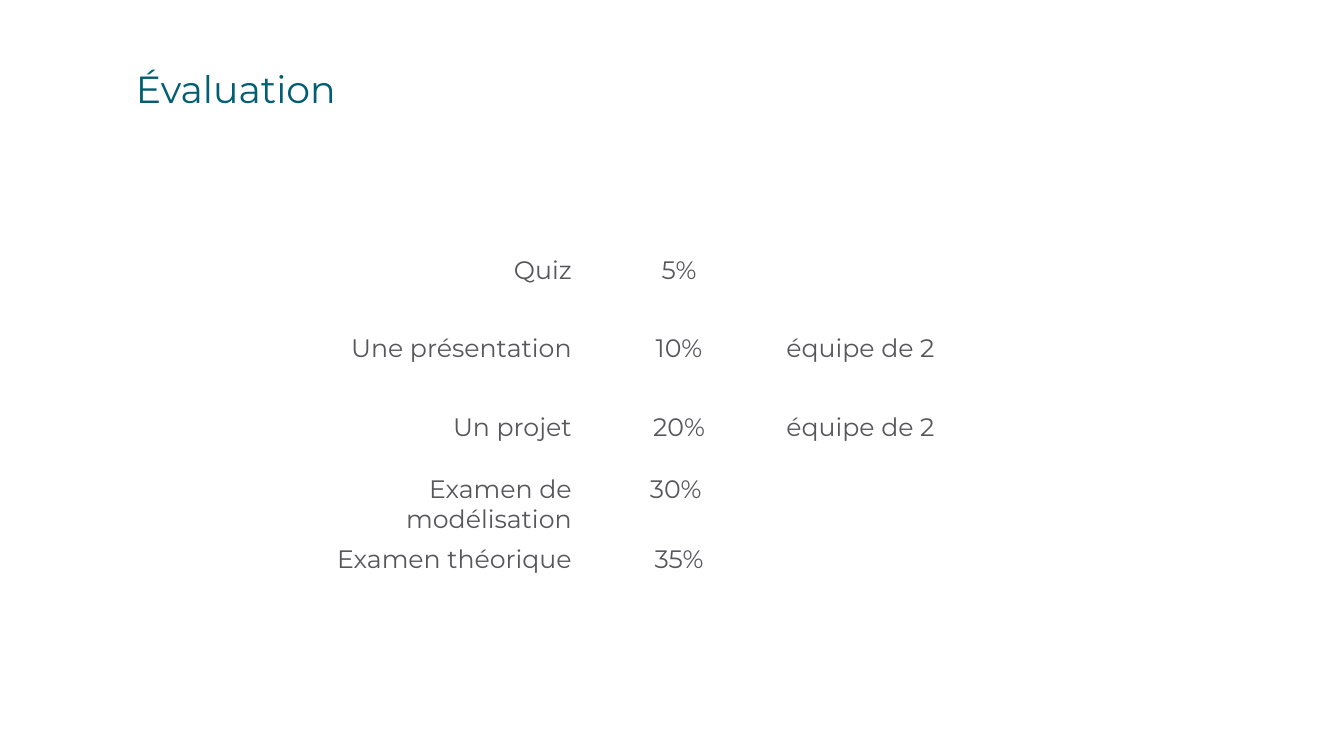
import dataclasses

import pptx
import pptx.dml.color
import pptx.enum.text
import pptx.util

Inches = pptx.util.Inches
Pt = pptx.util.Pt
Align = pptx.enum.text.PP_ALIGN
Anchor = pptx.enum.text.MSO_ANCHOR


@dataclasses.dataclass(frozen=True)
class Theme:
    """Typeface, type sizes and colours of the slide."""
    typeface: str = "Montserrat"
    title_size: float = 27
    body_size: float = 18
    skipped_line: float = 22
    title_color: str = "025E73"
    body_color: str = "57565B"
    background: str = "FFFFFF"


class SlideBuilder:
    """Draws styled elements on the current slide."""

    def __init__(self, slide, theme):
        self.slide = slide
        self.theme = theme
        fill = slide.background.fill
        fill.solid()
        fill.fore_color.rgb = pptx.dml.color.RGBColor.from_string(theme.background)

    def style_text(self, paragraph, text, size, color, **layout):
        """Fill a paragraph with styled text."""
        paragraph.text = text
        for name, value in layout.items():
            setattr(paragraph, name, value)
        font = paragraph.runs[0].font
        formats = {"name": self.theme.typeface, "size": Pt(size), "bold": False}
        for name, value in formats.items():
            setattr(font, name, value)
        font.color.rgb = pptx.dml.color.RGBColor.from_string(color)

    def title(self, text, left, top, width, height):
        """Add the slide title."""
        box = self.slide.shapes.add_textbox(
            Inches(left), Inches(top), Inches(width), Inches(height))
        frame = box.text_frame
        for name, value in {"word_wrap": True, "vertical_anchor": Anchor.TOP}.items():
            setattr(frame, name, value)
        self.style_text(frame.paragraphs[0], text, self.theme.title_size,
                        self.theme.title_color, line_spacing=0.9)

    def table(self, rows, left, top, widths, row_height, alignments):
        """Add an unfilled table whose cells hold lists of paragraphs."""
        table = self.slide.shapes.add_table(
            len(rows), len(widths), Inches(left), Inches(top),
            Inches(sum(widths)), Inches(row_height * len(rows))).table
        for name, value in {"first_row": False, "horz_banding": False}.items():
            setattr(table, name, value)
        for column, width in zip(table.columns, widths):
            column.width = Inches(width)
        for row, contents in zip(table.rows, rows):
            row.height = Inches(row_height)
            for cell, texts, alignment in zip(row.cells, contents, alignments):
                cell.fill.background()
                self.cell_text(cell.text_frame, texts, alignment)

    def cell_text(self, frame, texts, alignment):
        """Set paragraphs one skipped line apart."""
        for index, text in enumerate(texts):
            paragraph = frame.add_paragraph() if index else frame.paragraphs[0]
            gap = Pt(self.theme.skipped_line if index else 0)
            self.style_text(paragraph, text, self.theme.body_size,
                            self.theme.body_color, alignment=alignment,
                            space_before=gap)


GRADES = [
    (["Quiz"], ["5%"], []),
    (["Une présentation"], ["10%"], ["équipe de 2"]),
    (["Un projet", "Examen de modélisation"], ["20%", "30% "], ["équipe de 2"]),
    (["Examen théorique"], ["35%"], []),
]


def main():
    """Build and save the evaluation slide."""
    presentation = pptx.Presentation()
    presentation.slide_width = Inches(13.33)
    presentation.slide_height = Inches(7.5)
    slide = presentation.slides.add_slide(presentation.slide_layouts[6])
    builder = SlideBuilder(slide, Theme())
    builder.title("Évaluation", 1.25, 0.65, 11.5, 0.75)
    builder.table(GRADES, 2.6, 2.48, [3.17, 1.93, 2.55], 0.78,
                  [Align.RIGHT, Align.CENTER, Align.LEFT])
    presentation.save("out.pptx")


if __name__ == "__main__":
    main()
